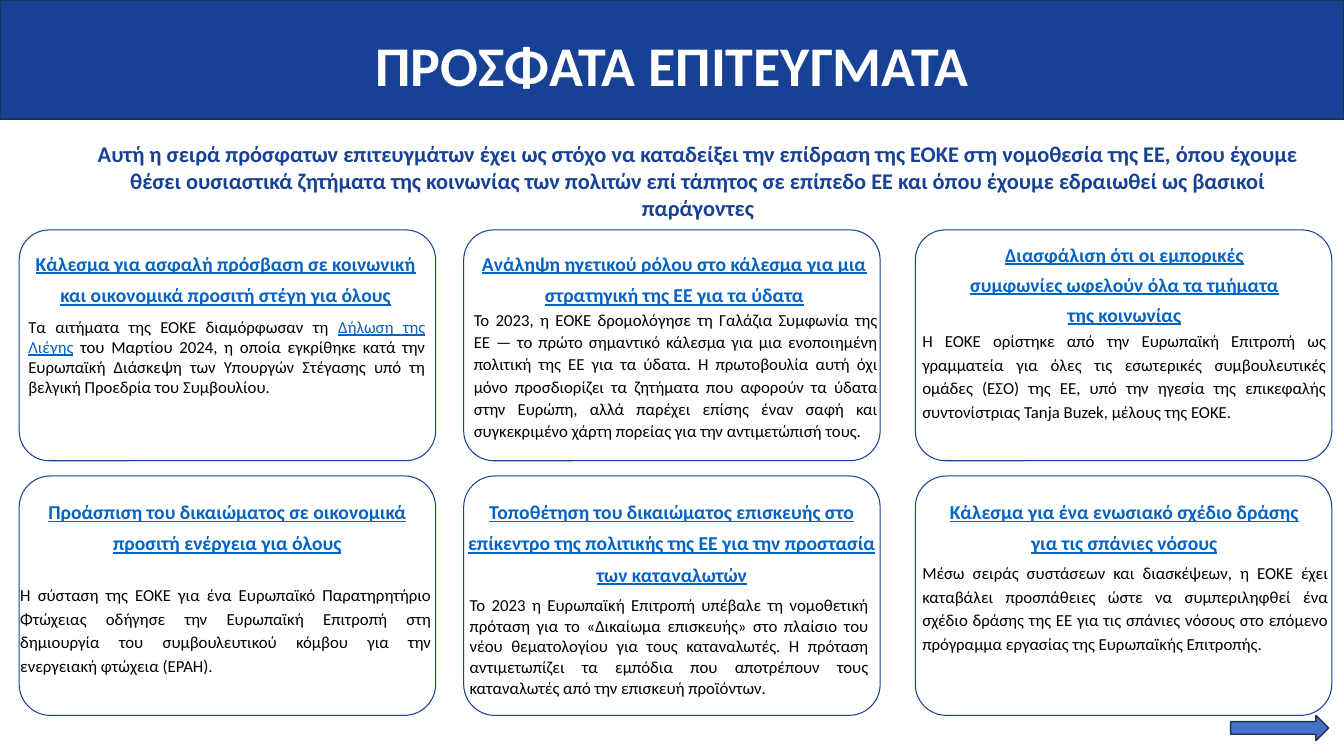
"""Build the slide of recent achievements: banner, introduction and six cards."""
from pptx import Presentation
from pptx.dml.color import RGBColor
from pptx.enum.shapes import MSO_SHAPE
from pptx.enum.text import PP_ALIGN
from pptx.util import Pt

RECTANGLE = MSO_SHAPE.RECTANGLE
ROUNDED = MSO_SHAPE.ROUNDED_RECTANGLE
RIGHT_ARROW = MSO_SHAPE.RIGHT_ARROW
CENTER, JUSTIFY = PP_ALIGN.CENTER, PP_ALIGN.JUSTIFY

NAVY = RGBColor(0x17, 0x41, 0x95)
OUTLINE = RGBColor(0x1E, 0x32, 0x56)
ARROW_BLUE = RGBColor(0x44, 0x72, 0xC4)
LINK_BLUE = RGBColor(0x05, 0x63, 0xC1)
BLACK = RGBColor(0, 0, 0)
WHITE = RGBColor(0xFF, 0xFF, 0xFF)

FONT = "Calibri"
COLUMN_LEFTS = (13.7, 331.2, 653.8)
CARD_ROWS = ((164.2, 164.9), (340, 171))
CARD_WIDTH = 297.5
CORNER = 0.13

CARDS = [
    {"heading": "Κάλεσμα για ασφαλή πρόσβαση σε κοινωνική και οικονομικά προσιτή στέγη για όλους",
     "heading_box": (15.8, 174.2, 290.9, 44),
     "body": "Τα αιτήματα της ΕΟΚΕ διαμόρφωσαν τη Δήλωση της Λιέγης του Μαρτίου 2024, η οποία "
             "εγκρίθηκε κατά την Ευρωπαϊκή Διάσκεψη των Υπουργών Στέγασης υπό τη βελγική "
             "Προεδρία του Συμβουλίου.",
     "body_box": (20.2, 226.1, 283.7, 58), "link": "Δήλωση της Λιέγης"},
    {"heading": "Ανάληψη ηγετικού ρόλου στο κάλεσμα για μια στρατηγική της ΕΕ για τα ύδατα",
     "heading_box": (343.4, 174.2, 276.5, 43),
     "body": "Το 2023, η ΕΟΚΕ δρομολόγησε τη Γαλάζια Συμφωνία της ΕΕ — το πρώτο σημαντικό "
             "κάλεσμα για μια ενοποιημένη πολιτική της ΕΕ για τα ύδατα. Η πρωτοβουλία αυτή όχι "
             "μόνο προσδιορίζει τα ζητήματα που αφορούν τα ύδατα στην Ευρώπη, αλλά παρέχει "
             "επίσης έναν σαφή και συγκεκριμένο χάρτη πορείας για την αντιμετώπισή τους.",
     "body_box": (338.4, 219.6, 288.7, 96), "body_spacing": 15.9},
    {"heading": "Διασφάλιση ότι οι εμπορικές συμφωνίες ωφελούν όλα τα τμήματα της κοινωνίας",
     "heading_box": (690.5, 168.5, 225.4, 62), "heading_spacing": 21.5,
     "body": "Η ΕΟΚΕ ορίστηκε από την Ευρωπαϊκή Επιτροπή ως γραμματεία για όλες τις εσωτερικές "
             "συμβουλευτικές ομάδες (ΕΣΟ) της ΕΕ, υπό την ηγεσία της επικεφαλής συντονίστριας "
             "Tanja Buzek, μέλους της ΕΟΚΕ.",
     "body_box": (658.8, 234, 288.7, 68), "body_spacing": 16.8},
    {"heading": "Προάσπιση του δικαιώματος σε οικονομικά προσιτή ενέργεια για όλους",
     "heading_box": (31.7, 351.4, 261.4, 43),
     "body": "Η σύσταση της ΕΟΚΕ για ένα Ευρωπαϊκό Παρατηρητήριο Φτώχειας οδήγησε την Ευρωπαϊκή "
             "Επιτροπή στη δημιουργία του συμβουλευτικού κόμβου για την ενεργειακή φτώχεια (EPAH).",
     "body_box": (14.4, 415.4, 293.8, 68), "body_spacing": 16.8},
    {"heading": "Τοποθέτηση του δικαιώματος επισκευής στο επίκεντρο της πολιτικής της ΕΕ για την "
                "προστασία των καταναλωτών",
     "heading_box": (332.6, 351.4, 294.5, 65),
     "body": "Το 2023 η Ευρωπαϊκή Επιτροπή υπέβαλε τη νομοθετική πρόταση για το «Δικαίωμα "
             "επισκευής» στο πλαίσιο του νέου θεματολογίου για τους καταναλωτές. Η πρόταση "
             "αντιμετωπίζει τα εμπόδια που αποτρέπουν τους καταναλωτές από την επισκευή προϊόντων.",
     "body_box": (335.5, 424.1, 285.1, 75), "body_spacing": 14.9},
    {"heading": "Κάλεσμα για ένα ενωσιακό σχέδιο δράσης\nγια τις σπάνιες νόσους",
     "heading_box": (653, 351.4, 300.2, 43),
     "body": "Μέσω σειράς συστάσεων και διασκέψεων, η ΕΟΚΕ έχει καταβάλει προσπάθειες ώστε να "
             "συμπεριληφθεί ένα σχέδιο δράσης της ΕΕ για τις σπάνιες νόσους στο επόμενο "
             "πρόγραμμα εργασίας της Ευρωπαϊκής Επιτροπής.",
     "body_box": (658.8, 399.6, 290.2, 68), "body_spacing": 16.8},
]


def add_panel(slide, preset, box, line, line_width, fill=None):
    """Add a preset shape with an outline and an optional fill."""
    panel = slide.shapes.add_shape(preset, *map(Pt, box))
    panel.shadow.inherit = False
    if fill is None:
        panel.fill.background()
    else:
        panel.fill.solid()
        panel.fill.fore_color.rgb = fill
    panel.line.color.rgb = line
    panel.line.width = Pt(line_width)
    return panel


def add_text(slide, text, box, *, size, color, bold=False, underline=False,
             align=CENTER, spacing=None, insets=(0, 0), link=None):
    """Add a wrapped text box, one paragraph per line, with one phrase styled as a link."""
    frame = slide.shapes.add_textbox(*map(Pt, box)).text_frame
    frame.word_wrap = True
    frame.margin_left = frame.margin_right = Pt(insets[0])
    frame.margin_top = frame.margin_bottom = Pt(insets[1])
    frame.text = text
    for paragraph in frame.paragraphs:
        paragraph.alignment = align
        if spacing:
            paragraph.line_spacing = Pt(spacing)
        pieces = paragraph.text.partition(link) if link else (paragraph.text,)
        paragraph.clear()
        for piece in pieces:
            run = paragraph.add_run()
            run.text = piece
            run.font.name = FONT
            run.font.size = Pt(size)
            run.font.bold = bold
            run.font.underline = underline or piece == link
            run.font.color.rgb = LINK_BLUE if piece == link else color


def add_card(slide, index, card):
    """Add one outlined card with its heading and body."""
    row, column = divmod(index, len(COLUMN_LEFTS))
    top, height = CARD_ROWS[row]
    frame_box = (COLUMN_LEFTS[column], top, CARD_WIDTH, height)
    outline = add_panel(slide, ROUNDED, frame_box, NAVY, 0.75)
    outline.adjustments[0] = CORNER
    add_text(slide, card["heading"], card["heading_box"], size=14, color=LINK_BLUE,
             bold=True, underline=True, spacing=card.get("heading_spacing", 22.4))
    add_text(slide, card["body"], card["body_box"], size=12, color=BLACK, align=JUSTIFY,
             spacing=card.get("body_spacing"), link=card.get("link"))


def main():
    """Compose the slide and save it."""
    presentation = Presentation()
    presentation.slide_width, presentation.slide_height = Pt(960), Pt(540)
    slide = presentation.slides.add_slide(presentation.slide_layouts[6])

    add_panel(slide, RECTANGLE, (0, 0, 960, 85), OUTLINE, 1, fill=NAVY)
    add_text(slide, "ΠΡΟΣΦΑΤΑ ΕΠΙΤΕΥΓΜΑΤΑ", (0, 36.7, 960, 36.7), size=40, color=WHITE,
             bold=True, spacing=33)
    add_text(slide, "Αυτή η σειρά πρόσφατων επιτευγμάτων έχει ως στόχο να καταδείξει την επίδραση "
             "της ΕΟΚΕ στη νομοθεσία της ΕΕ, όπου έχουμε θέσει ουσιαστικά ζητήματα της κοινωνίας "
             "των πολιτών επί τάπητος σε επίπεδο ΕΕ και όπου έχουμε εδραιωθεί ως βασικοί "
             "παράγοντες", (48.2, 96.5, 900.7, 65.5), size=16, color=NAVY, bold=True,
             insets=(7.2, 3.6))
    for index, card in enumerate(CARDS):
        add_card(slide, index, card)
    add_panel(slide, RIGHT_ARROW, (879, 511, 70, 18), OUTLINE, 1, fill=ARROW_BLUE)

    presentation.save("out.pptx")


if __name__ == "__main__":
    main()
